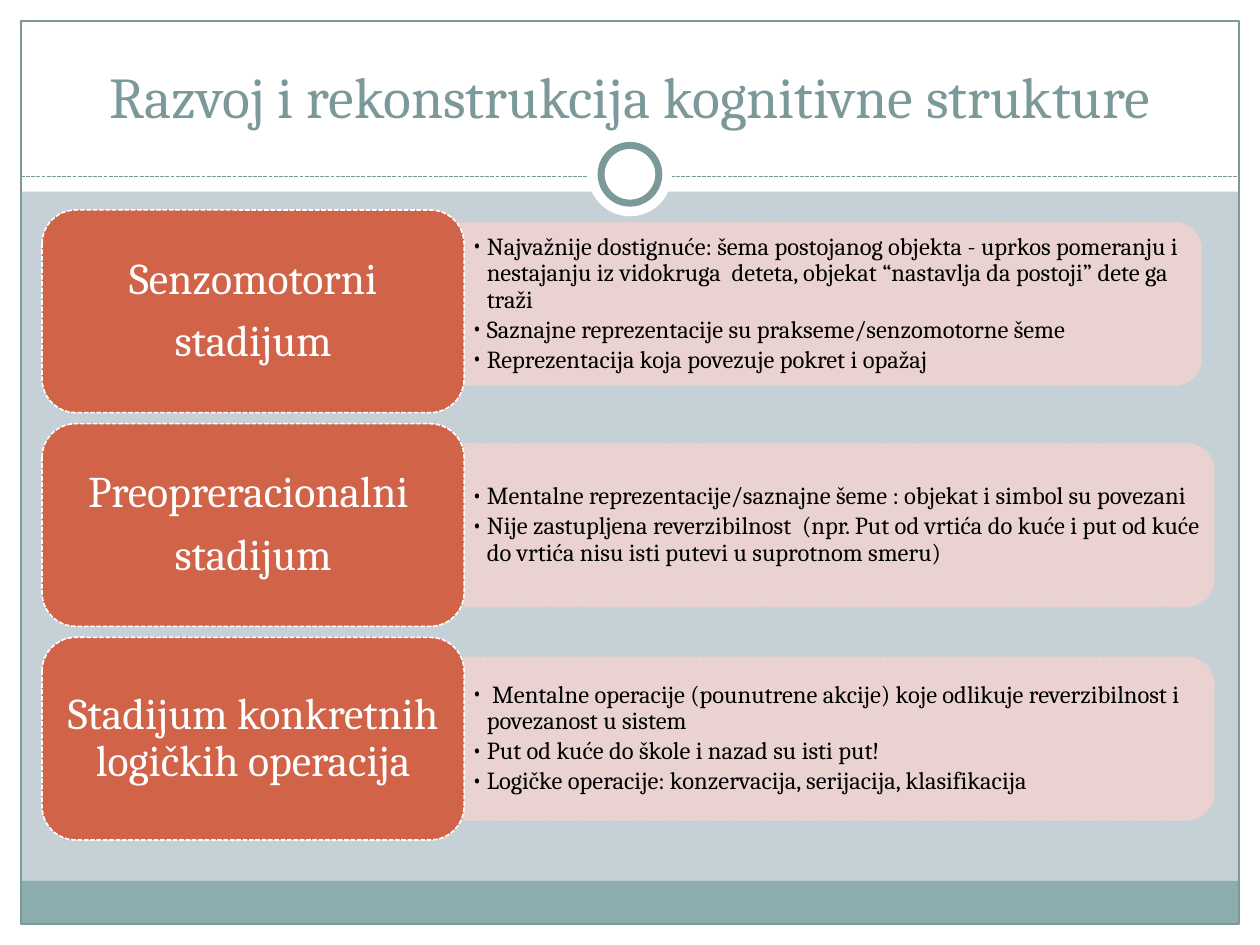
from dataclasses import dataclass

from lxml import etree
from pptx import Presentation
from pptx import util as u
from pptx.dml.color import RGBColor
from pptx.enum import dml, shapes, text
from pptx.oxml.ns import qn


@dataclass(frozen=True)
class Theme:
    font: str = "Cambria"
    backdrop: str = "C5D1D7"
    white: str = "FFFFFF"
    accent: str = "7C999A"
    footer: str = "8CADAE"
    card: str = "D16349"
    panel: str = "EED3D0"
    ink: str = "000000"
    title_size: float = 33
    card_size: float = 25
    panel_size: float = 14


@dataclass(frozen=True)
class Box:
    """A region in grid columns and rows; one cell is 1/12 inch."""
    left: float
    top: float
    width: float
    height: float

    def inset(self, dx, dy):
        return Box(self.left + dx, self.top + dy, self.width - 2 * dx, self.height - 2 * dy)

    def quarter_turn(self):
        """Unrotated frame of a shape that fills this box after turning 90 degrees."""
        shift = (self.width - self.height) / 2
        return Box(self.left + shift, self.top - shift, self.height, self.width)

    def emu(self):
        return [cells(n) for n in (self.left, self.top, self.width, self.height)]


THEME = Theme()
COLUMNS, ROWS = 120, 90
SHAPE = shapes.MSO_SHAPE
MIDDLE = text.MSO_ANCHOR.MIDDLE

STAGES = [
    (["Senzomotorni", "stadijum"],
     ["Najvažnije dostignuće: šema postojanog objekta - uprkos pomeranju i nestajanju "
      "iz vidokruga  deteta, objekat “nastavlja da postoji” dete ga traži",
      "Saznajne reprezentacije su prakseme/senzomotorne šeme",
      "Reprezentacija koja povezuje pokret i opažaj"],
     (-1.2, -0.7)),
    (["Preopreracionalni ", "stadijum"],
     ["Mentalne reprezentacije/saznajne šeme : objekat i simbol su povezani",
      "Nije zastupljena reverzibilnost  (npr. Put od vrtića do kuće i put od kuće do "
      "vrtića nisu isti putevi u suprotnom smeru)"],
     (0, 0)),
    (["Stadijum konkretnih logičkih operacija"],
     [" Mentalne operacije (pounutrene akcije) koje odlikuje reverzibilnost i "
      "povezanost u sistem",
      "Put od kuće do škole i nazad su isti put!",
      "Logičke operacije: konzervacija, serijacija, klasifikacija"],
     (0, 0)),
]


def cells(count):
    return u.Inches(count / 12)


def style_line(line, color, width, dashed=False):
    line.color.rgb = RGBColor.from_string(color)
    line.width = u.Pt(width)
    if dashed:
        line.dash_style = dml.MSO_LINE.SQUARE_DOT


def add_shape(page, kind, box, fill=None, line=None, width=0.75, dashed=False):
    shape = page.shapes.add_shape(kind, *box.emu())
    shape.shadow.inherit = False
    if fill:
        shape.fill.solid()
        shape.fill.fore_color.rgb = RGBColor.from_string(fill)
    else:
        shape.fill.background()
    if line:
        style_line(shape.line, line, width, dashed)
    else:
        shape.line.fill.background()
    return shape


def add_text(page, box, lines, size, color, insets=(0.1, 0.05), anchor=MIDDLE,
             spacing=1.0, after=0, bullets=False):
    frame = page.shapes.add_textbox(*box.emu()).text_frame
    frame.word_wrap = True
    frame.vertical_anchor = anchor
    frame.margin_left = frame.margin_right = u.Inches(insets[0])
    frame.margin_top = frame.margin_bottom = u.Inches(insets[1])
    for index, line in enumerate(lines):
        para = frame.paragraphs[0] if index == 0 else frame.add_paragraph()
        para.alignment = text.PP_ALIGN.LEFT if bullets else text.PP_ALIGN.CENTER
        para.line_spacing = spacing
        para.space_after = u.Pt(after)
        if bullets:
            add_bullet(para)
        span = para.add_run()
        span.text = line
        span.font.name = THEME.font
        span.font.size = u.Pt(size)
        span.font.color.rgb = RGBColor.from_string(color)


def add_bullet(para):
    props = para._p.get_or_add_pPr()
    indent = u.Inches(0.12)
    props.set("marL", str(indent))
    props.set("indent", str(-indent))
    etree.SubElement(props, qn("a:buFont")).set("typeface", THEME.font)
    etree.SubElement(props, qn("a:buChar")).set("char", "•")


def make_translucent(shape, percent):
    for color in shape._element.spPr.iter(qn("a:srgbClr")):
        etree.SubElement(color, qn("a:alpha")).set("val", str(percent * 1000))


def draw_frame(page, box):
    inner = box.inset(2, 2)
    right, bottom = inner.left + inner.width, inner.top + inner.height
    # White margins and header
    for margin in (Box(0, bottom, box.width, 2), Box(0, 0, box.width, 18.25),
                   Box(0, 0, 2, box.height), Box(right, 0, 2, box.height)):
        add_shape(page, SHAPE.RECTANGLE, margin, THEME.white)
    # Footer band and outline
    add_shape(page, SHAPE.RECTANGLE, Box(inner.left, bottom - 4.1, inner.width, 4.1),
              THEME.footer)
    add_shape(page, SHAPE.RECTANGLE, inner, line=THEME.accent)
    # Dashed divider
    level = cells(16.8)
    divider = page.shapes.add_connector(
        shapes.MSO_CONNECTOR.STRAIGHT, cells(inner.left), level, cells(right), level)
    style_line(divider.line, THEME.accent, 0.75, dashed=True)
    etree.SubElement(divider._element.spPr, qn("a:effectLst"))
    # Ring on the divider
    halo = Box(box.width / 2 - 4, 12.6, 8, 8)
    add_shape(page, SHAPE.OVAL, halo, THEME.white)
    add_shape(page, SHAPE.OVAL, halo.inset(1.25, 1.25), THEME.white, THEME.accent, 4)


def draw_title(page, box):
    add_text(page, box, ["Razvoj i rekonstrukcija kognitivne strukture"],
             THEME.title_size, THEME.accent, anchor=text.MSO_ANCHOR.BOTTOM)


def draw_stage(page, box, heading, points, nudge):
    card = Box(box.left, box.top, 40.2, box.height)
    card_right = card.left + card.width
    panel = Box(card_right + nudge[0], box.top + 1.9 + nudge[1],
                box.width - card.width, box.height - 3.8)
    # Panel, rounded on its right side
    back = add_shape(page, SHAPE.ROUND_2_SAME_RECTANGLE, panel.quarter_turn(),
                     THEME.panel, THEME.panel, 0.9, dashed=True)
    back.rotation = 90
    make_translucent(back, 90)
    # Card with the name of the stage
    add_shape(page, SHAPE.ROUNDED_RECTANGLE, card, THEME.card, THEME.white, 0.9, dashed=True)
    add_text(page, card.inset(0.95, 0.95), heading, THEME.card_size, THEME.white,
             spacing=0.9, after=8.75)
    # Points start at the card's edge, so the bullets stay clear of it
    points_box = Box(card_right, panel.top + 0.8,
                     panel.left + panel.width - card_right, panel.height - 1.6)
    add_text(page, points_box, points, THEME.panel_size, THEME.ink, insets=(0.06, 0.03),
             spacing=0.9, after=2.1, bullets=True)


def draw_stages(page, box):
    gap = 1.05
    height = (box.height - gap * (len(STAGES) - 1)) / len(STAGES)
    for index, stage in enumerate(STAGES):
        top = box.top + index * (height + gap)
        draw_stage(page, Box(box.left, top, box.width, height), *stage)


def main():
    deck = Presentation()
    deck.slide_width, deck.slide_height = cells(COLUMNS), cells(ROWS)
    page = deck.slides.add_slide(deck.slide_layouts[6])
    page.background.fill.solid()
    page.background.fill.fore_color.rgb = RGBColor.from_string(THEME.backdrop)
    draw_frame(page, Box(0, 0, COLUMNS, ROWS))
    draw_title(page, Box(4, 3, 112, 10))
    draw_stages(page, Box(4, 20, 111.6, 60))
    deck.save("out.pptx")


if __name__ == "__main__":
    main()
